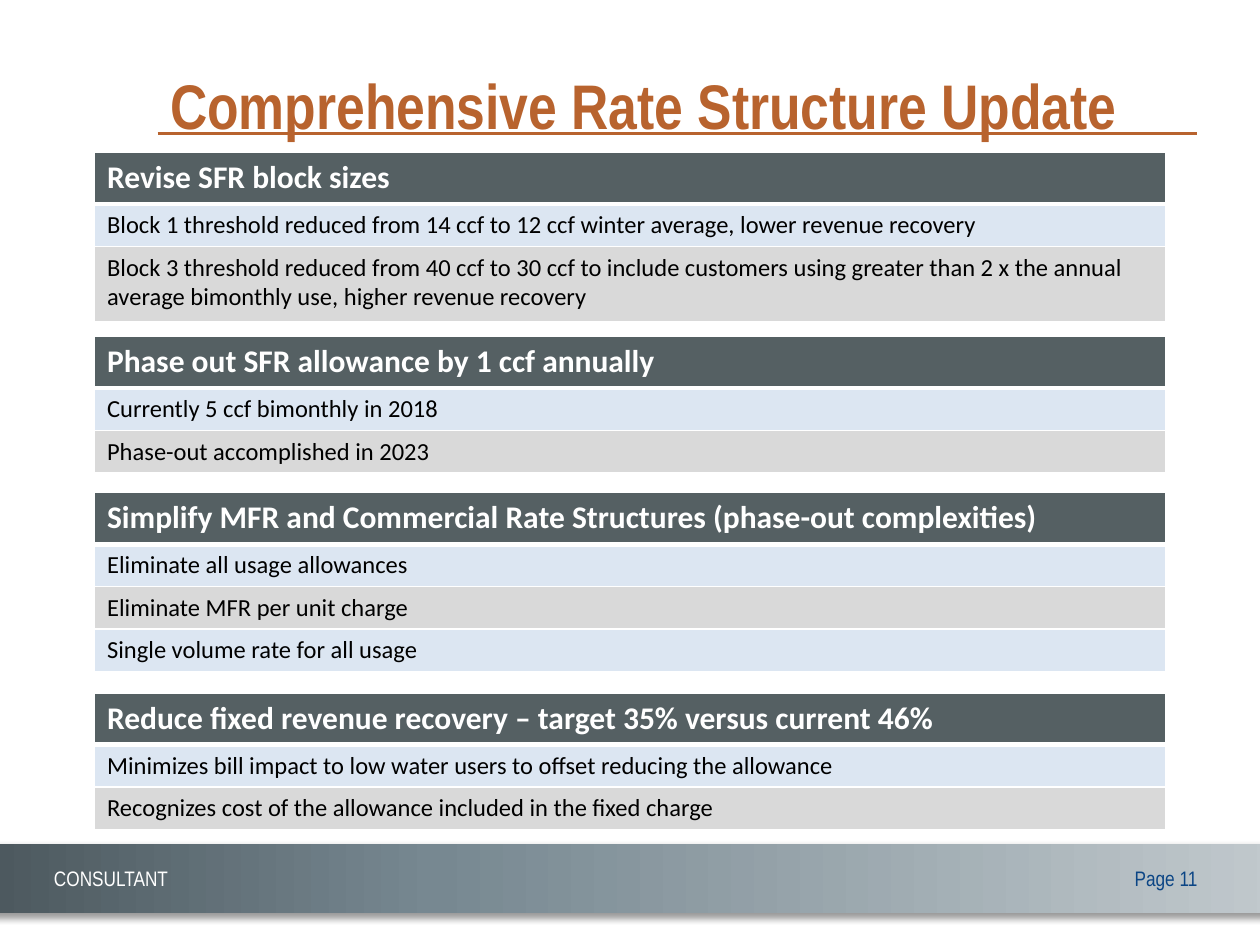
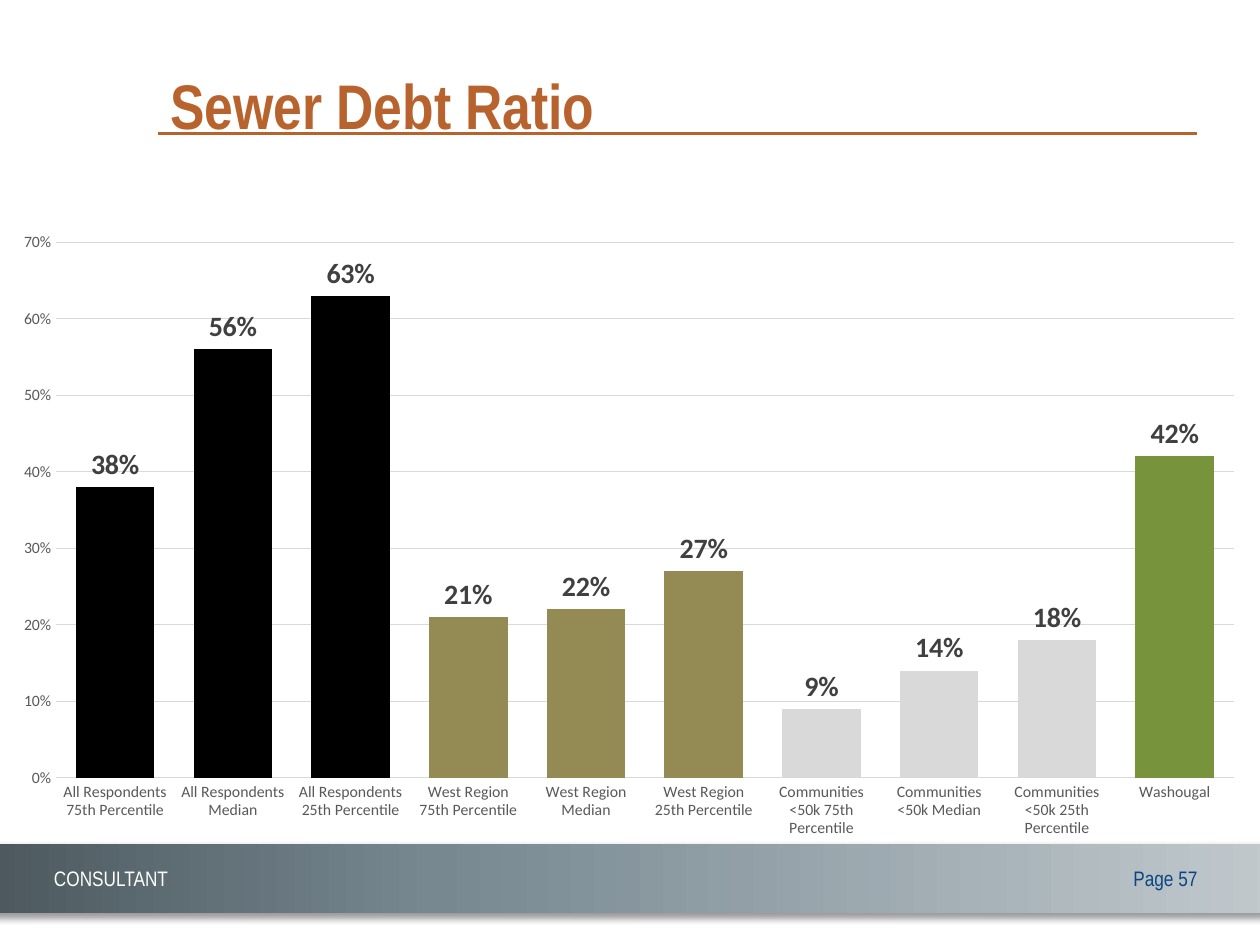
from lxml import etree
from pptx import Presentation
from pptx import util as u
from pptx.chart.data import CategoryChartData
from pptx.dml.color import RGBColor
from pptx.enum import chart as c, shapes, text
from pptx.oxml import parse_xml
from pptx.oxml.ns import nsdecls, qn

ORANGE = RGBColor(0xB8, 0x63, 0x2E)
NAVY = RGBColor(0x0B, 0x45, 0x85)
WHITE = RGBColor(0xFF, 0xFF, 0xFF)
BLACK = RGBColor(0, 0, 0)
SLATE = RGBColor(0x55, 0x60, 0x63)
PALE_BLUE = RGBColor(0xDC, 0xE6, 0xF2)
LIGHT_GREY = RGBColor(0xD9, 0xD9, 0xD9)
LABEL_GREY = RGBColor(0x40, 0x40, 0x40)
AXIS_GREY = RGBColor(0x59, 0x59, 0x59)
KHAKI = RGBColor(0x94, 0x8A, 0x54)
GREEN = RGBColor(0x77, 0x93, 0x3C)
BAND_STOPS = [(0, "C1C9CD"), (65, "778891"), (100, "4B575D")]
HEADING_FONT, BODY_FONT = "Arial Narrow", "Calibri"

presentation = Presentation()
presentation.slide_width, presentation.slide_height = u.Inches(10), u.Inches(7.5)
TITLE_LEFT, TITLE_RIGHT, RULE_TOP = u.Inches(1.25), u.Inches(9.5), u.Inches(1.06)


def set_font(font, size, color, name=BODY_FONT, bold=False):
    font.size, font.name, font.bold = u.Pt(size), name, bold
    font.color.rgb = color


def add_framed_slide(title_text, page):
    """Add a slide with the shared title, rule, footer band and footer texts."""
    slide = presentation.slides.add_slide(presentation.slide_layouts[5])

    # Footer band with gradient and shadow
    band = slide.shapes.add_shape(shapes.MSO_SHAPE.RECTANGLE, u.Inches(-0.17),
                                  u.Inches(6.7), u.Inches(10.33), u.Inches(0.55))
    band.line.fill.background()
    band.shadow.inherit = False
    stops = "".join(f'<a:gs pos="{share * 1000}"><a:srgbClr val="{color}"/></a:gs>'
                    for share, color in BAND_STOPS)
    properties = band.element.spPr
    properties.find(qn("a:prstGeom")).addnext(parse_xml(
        f'<a:gradFill {nsdecls("a")}><a:gsLst>{stops}</a:gsLst>'
        '<a:lin ang="10800000" scaled="0"/></a:gradFill>'))
    properties.find(qn("a:effectLst")).append(parse_xml(
        f'<a:outerShdw {nsdecls("a")} blurRad="{u.Pt(4)}" dist="{u.Pt(3)}" dir="2700000">'
        '<a:srgbClr val="000000"><a:alpha val="40000"/></a:srgbClr></a:outerShdw>'))

    # Footer texts
    for left, width, words, color, align in [
            (8.83, 0.81, f"Page {page} ", NAVY, text.PP_ALIGN.RIGHT),
            (0.33, 1.42, "CONSULTANT", WHITE, text.PP_ALIGN.LEFT)]:
        box = slide.shapes.add_textbox(u.Inches(left), u.Inches(6.82),
                                       u.Inches(width), u.Inches(0.3))
        box.text_frame.word_wrap = True
        paragraph = box.text_frame.paragraphs[0]
        paragraph.text, paragraph.alignment = words, align
        set_font(paragraph.font, 12, color, HEADING_FONT)

    # Rule under the title
    rule = slide.shapes.add_connector(shapes.MSO_CONNECTOR.STRAIGHT,
                                      TITLE_LEFT, RULE_TOP, TITLE_RIGHT, RULE_TOP)
    rule.line.color.rgb, rule.line.width = ORANGE, u.Pt(1.5)
    etree.SubElement(rule.element.spPr, qn("a:effectLst"))

    # Title, in front of the rule
    title = slide.shapes.title
    title.left, title.top = TITLE_LEFT, u.Inches(0.33)
    title.width, title.height = TITLE_RIGHT - TITLE_LEFT, u.Inches(1)
    title.text_frame.text = title_text
    title.text_frame.auto_size = text.MSO_AUTO_SIZE.NONE
    title.text_frame.vertical_anchor = text.MSO_ANCHOR.MIDDLE
    paragraph = title.text_frame.paragraphs[0]
    paragraph.alignment = text.PP_ALIGN.LEFT
    set_font(paragraph.font, 36, ORANGE, HEADING_FONT, True)
    rule.element.addnext(title.element)
    return slide


# Slide 1: one table per rate change, heading row first
HEADING_ROW, LINE_ROW, TWO_LINE_ROW = 0.41, 0.33, 0.6
rate_changes = [
    (1.21, ["Revise SFR block sizes",
            "Block 1 threshold reduced from 14 ccf to 12 ccf winter average, lower revenue recovery",
            "Block 3 threshold reduced from 40 ccf to 30 ccf to include customers using greater "
            "than 2 x the annual average bimonthly use, higher revenue recovery"]),
    (2.67, ["Phase out SFR allowance by 1 ccf annually",
            "Currently 5 ccf bimonthly in 2018",
            "Phase-out accomplished in 2023"]),
    (3.91, ["Simplify MFR and Commercial Rate Structures (phase-out complexities)",
            "Eliminate all usage allowances",
            "Eliminate MFR per unit charge",
            "Single volume rate for all usage"]),
    (5.5, ["Reduce fixed revenue recovery – target 35% versus current 46%",
           "Minimizes bill impact to low water users to offset reducing the allowance",
           "Recognizes cost of the allowance included in the fixed charge"]),
]
slide = add_framed_slide("Comprehensive Rate Structure Update", 11)
for top, lines in rate_changes:
    heights = [HEADING_ROW] + [TWO_LINE_ROW if len(line) > 100 else LINE_ROW
                               for line in lines[1:]]
    table = slide.shapes.add_table(len(lines), 1, u.Inches(0.75), u.Inches(top),
                                   u.Inches(8.5), u.Inches(sum(heights))).table
    for index, (line, height) in enumerate(zip(lines, heights)):
        table.rows[index].height = u.Inches(height)
        cell = table.cell(index, 0)
        cell.text = line
        heading = index == 0
        set_font(cell.text_frame.paragraphs[0].font, 18 if heading else 14,
                 WHITE if heading else BLACK, bold=heading)
        # White borders, thick between heading and body
        thick_side = {0: "B", 1: "T"}.get(index)
        for side in "LRTB":
            width = u.Pt(3 if side == thick_side else 1)
            cell._tc.get_or_add_tcPr().append(parse_xml(
                f'<a:ln{side} {nsdecls("a")} w="{width}"><a:solidFill>'
                f'<a:srgbClr val="{WHITE}"/></a:solidFill></a:ln{side}>'))
        cell.fill.solid()
        cell.fill.fore_color.rgb = SLATE if heading else (LIGHT_GREY, PALE_BLUE)[index % 2]

# Slide 2: debt ratio chart, three columns per peer group and then the city
peer_groups = [("All Respondents", BLACK, [0.38, 0.56, 0.63]),
               ("West Region", KHAKI, [0.21, 0.22, 0.27]),
               ("Communities <50k", LIGHT_GREY, [0.09, 0.14, 0.18])]
measures = ["75th Percentile", "Median", "25th Percentile"]
columns = [(f"{group} {measure}", value, color) for group, color, values in peer_groups
           for measure, value in zip(measures, values)]
columns.append(("Washougal", 0.42, GREEN))

slide = add_framed_slide("Sewer Debt Ratio", 57)
data = CategoryChartData(number_format="0%")
data.categories = [name for name, _, _ in columns]
data.add_series("Series 1", [value for _, value, _ in columns])
chart = slide.shapes.add_chart(c.XL_CHART_TYPE.COLUMN_CLUSTERED, u.Inches(-0.01),
                               u.Inches(1.75), u.Inches(10), u.Inches(5), data).chart
chart.has_title = chart.has_legend = False
set_font(chart.font, 10, BLACK)

# Axes
for axis in (chart.category_axis, chart.value_axis):
    axis.major_tick_mark = axis.minor_tick_mark = c.XL_TICK_MARK.NONE
    set_font(axis.tick_labels.font, 9, AXIS_GREY)
chart.value_axis.minimum_scale, chart.value_axis.maximum_scale = 0, 0.7
chart.value_axis.major_unit = 0.1
chart.value_axis.tick_labels.number_format = "0%"
chart.value_axis.tick_labels.number_format_is_linked = False
chart.value_axis.format.line.fill.background()
for line in (chart.category_axis.format.line, chart.value_axis.major_gridlines.format.line):
    line.color.rgb, line.width = LIGHT_GREY, u.Pt(0.75)

# Columns and their labels
plot = chart.plots[0]
plot.gap_width, plot.overlap, plot.vary_by_categories = 50, -27, False
series = plot.series[0]
series.format.fill.solid()
series.format.fill.fore_color.rgb = BLACK
for index, (_, _, color) in enumerate(columns):
    if color != BLACK:
        fill = series.points[index].format.fill
        fill.solid()
        fill.fore_color.rgb = color
labels = series.data_labels
labels.show_value = True
labels.number_format, labels.number_format_is_linked = "0%", False
labels.position = c.XL_LABEL_POSITION.OUTSIDE_END
set_font(labels.font, 16, LABEL_GREY, bold=True)

presentation.save("out.pptx")
